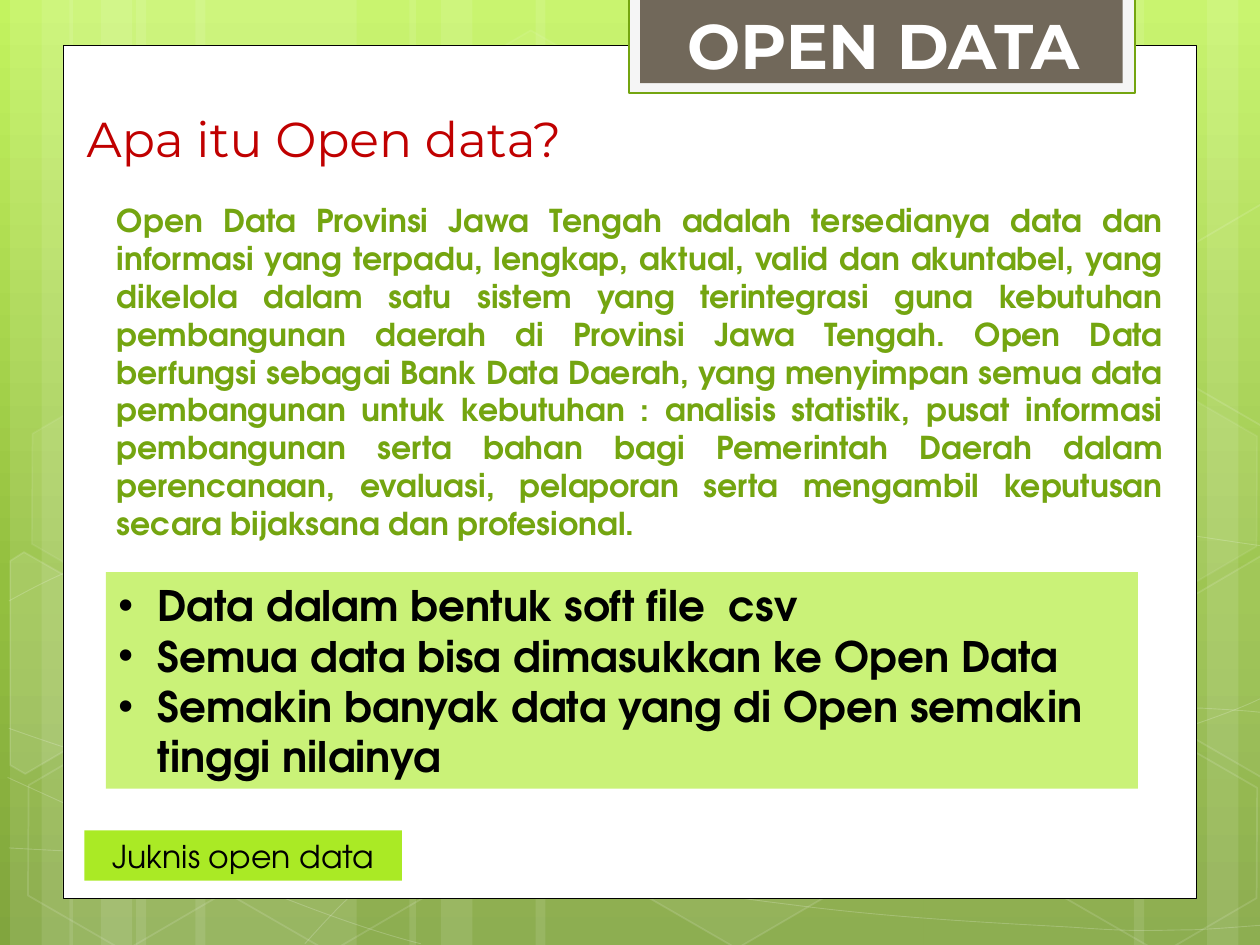
from copy import deepcopy
from math import cos, radians, sin
from lxml import etree
from pptx import Presentation
from pptx.dml.color import RGBColor
from pptx.enum.shapes import MSO_SHAPE
from pptx.enum.text import MSO_ANCHOR, MSO_AUTO_SIZE, PP_ALIGN
from pptx.oxml.ns import qn
from pptx.util import Inches, Pt

RECT, HEX = MSO_SHAPE.RECTANGLE, MSO_SHAPE.HEXAGON
LEFT, CENTER, JUSTIFY = PP_ALIGN.LEFT, PP_ALIGN.CENTER, PP_ALIGN.JUSTIFY
TOP, MIDDLE, FIXED = MSO_ANCHOR.TOP, MSO_ANCHOR.MIDDLE, MSO_AUTO_SIZE.NONE
HEAD, BODY = "Montserrat", "TeX Gyre Adventor"
COLORS = {
    "white": "FFFFFF", "black": "000000", "red": "C00000", "green": "74A510",
    "pale": "F5F5F5", "taupe": "71685A", "lime": "CAF278", "bright": "AAEA25",
    "sky": "C3F35F", "mid": "93BF3F", "deep": "81A53E",
}


def paint(shape, fill=None, line=None, width=1, see=100, edge=100):
    """Set fill and line; see and edge are their opacities in percent."""
    shape.shadow.inherit = False
    props = shape._element.spPr
    for ink, name, part in ((shape.fill, fill, see), (shape.line.fill, line, edge)):
        if not name or not part:
            ink.background()
            continue
        ink.solid()
        ink.fore_color.rgb = RGBColor.from_string(COLORS[name])
        if part < 100:
            home = props if ink is shape.fill else props.find(qn("a:ln"))
            color = home.find(qn("a:solidFill")).find(qn("a:srgbClr"))
            etree.SubElement(color, qn("a:alpha")).set("val", str(part * 1000))
    if line:
        shape.line.width = Pt(width)


def write(shape, lines, size, font, color, bold=False, align=LEFT, anchor=TOP):
    frame = shape.text_frame
    frame.word_wrap, frame.auto_size = True, FIXED
    frame.vertical_anchor = anchor
    frame.text = "\n".join(lines)
    for para in frame.paragraphs:
        para.alignment = align
        para.space_before = Pt(0)
        for run in para.runs:
            run.font.size, run.font.name, run.font.bold = Pt(size), font, bold
            run.font.color.rgb = RGBColor.from_string(COLORS[color])


deck = Presentation()
deck.slide_width, deck.slide_height = Inches(10), Inches(7.5)
slide = deck.slides.add_slide(deck.slide_layouts[1])
shapes = slide.shapes
title, points = slide.placeholders

# Background gradient
back = slide.background.fill
back.gradient()
back.gradient_angle = 270
stops = slide._element.find(".//" + qn("a:gsLst"))
stops.append(deepcopy(stops[-1]))
for stop, (at, name) in zip(back.gradient_stops, ((0, "sky"), (0.62, "mid"), (1, "deep"))):
    stop.position = at
    stop.color.rgb = RGBColor.from_string(COLORS[name])

# Vertical bands: left, width
for x, w in ((1.08, 1.75), (0.08, 0.5), (0.33, 0.83), (1.55, 1.75), (0.55, 0.5),
             (0.8, 0.83), (7.33, 1.75), (9.58, 0.5), (9, 0.83), (4.25, 3.08),
             (3.25, 0.5), (3.5, 0.83)):
    band = shapes.add_shape(RECT, Inches(x), 0, Inches(w), Inches(7.5))
    paint(band, "white", see=10)

# Waves: a start point, then three points for each Bezier segment
waves = (
    ((0.07, 6.73), (0.61, 6.76), (1.15, 6.79), (1.9, 6.78), (2.65, 6.77), (3.58, 6.75),
     (4.58, 6.65), (5.58, 6.55), (7, 6.36), (7.92, 6.17), (8.83, 5.98), (9.77, 5.68),
     (10.07, 5.51)),
    ((0.07, 4.77), (0.36, 4.61), (0.65, 4.46), (1.21, 4.31), (1.78, 4.16), (2.59, 3.94),
     (3.47, 3.87), (4.36, 3.8), (5.44, 3.79), (6.54, 3.87), (7.64, 3.95), (9.47, 4.26),
     (10.07, 4.34)),
    ((0.06, 6.17), (1.27, 6.72), (2.47, 7.27), (3.34, 7.49)),
    ((0.07, 5.78), (0.38, 5.89), (0.7, 6), (1.28, 6.16), (1.86, 6.31), (2.73, 6.56),
     (3.57, 6.73), (4.4, 6.9), (5.45, 7.08), (6.28, 7.18), (7.11, 7.29), (8, 7.33),
     (8.53, 7.36), (9.05, 7.4), (9.19, 7.38), (9.45, 7.38), (9.71, 7.37), (9.89, 7.35),
     (10.07, 7.34)),
    ((2.42, 7.49), (2.6, 7.29), (2.78, 7.09), (3.02, 6.91), (3.26, 6.73), (3.6, 6.53),
     (3.88, 6.39), (4.16, 6.25), (4.33, 6.19), (4.7, 6.09), (5.06, 5.99), (5.73, 5.85),
     (6.08, 5.78), (6.44, 5.71), (6.49, 5.71), (6.8, 5.69), (7.11, 5.66), (7.6, 5.63),
     (7.94, 5.62), (8.29, 5.61), (8.86, 5.62), (8.86, 5.62), (9.08, 5.62), (9.31, 5.62),
     (9.53, 5.62), (9.71, 5.63), (9.88, 5.64), (9.97, 5.65), (10.06, 5.66), (10.03, 5.65),
     (10.06, 5.66)),
)
for dots in waves:
    trail = [(Inches(x), Inches(y)) for x, y in dots]
    pen = shapes.build_freeform(*trail[0], scale=1.0)
    pen.add_line_segments(trail[1:], close=False)
    wave = pen.convert_to_shape()
    paint(wave, line="white", width=0.5, edge=20)
    steps = list(wave._element.iter(qn("a:lnTo")))
    for i in range(0, len(steps), 3):
        curve = etree.Element(qn("a:cubicBezTo"))
        steps[i].addprevious(curve)
        for step in steps[i:i + 3]:
            curve.append(step[0])
            step.getparent().remove(step)

# Hexagons: left, top, fill opacity, line opacity
for x, y, see, edge in ((3.34, 0.36, 4, 8), (4.97, 5.89, 6, 12), (0.11, 5.91, 0, 12),
                        (0.14, 3.12, 7, 8), (1.74, 5.92, 0, 12), (7.53, 4.53, 10, 12),
                        (8.34, 5.93, 0, 12), (8.34, 3.14, 7, 8)):
    cell = shapes.add_shape(HEX, Inches(x), Inches(y), Inches(1.75), Inches(1.52))
    cell.adjustments[0] = 0.285
    cell.rotation = 30
    paint(cell, "white", "white", see=see, edge=edge)

# Hexagons cut off by the slide edges, outlined upright and then turned about their centre
right = ((9.26, 4.85), (10.01, 4.41), (10.09, 4.46), (10.09, 6.13), (10.02, 6.17), (9.26, 5.73))
left = ((0.08, 4.45), (0.19, 4.38), (0.96, 4.82), (0.95, 5.7), (0.2, 6.14), (0.08, 6.07))
c, s = cos(radians(30)), sin(radians(30))
for dots, mx, my, lift, see in ((left, 0.36, 5.35, 0, 10), (right, 9.85, 5.2, 0, 4),
                                (right, 9.85, 5.2, 2.79, 0)):
    trail = [(Inches(mx + (x - mx) * c + (y - my) * s),
              Inches(my - lift - (x - mx) * s + (y - my) * c)) for x, y in dots]
    pen = shapes.build_freeform(*trail[0], scale=1.0)
    pen.add_line_segments(trail[1:])
    part = pen.convert_to_shape()
    part.rotation = 30
    paint(part, "white", "white", see=see, edge=12)

# White page and the title plate
for x, y, w, h, fill, line, width in (
        (0.5, 0.36, 9, 6.77, "white", "black", 0.5),
        (4.99, -0.02, 4.02, 0.76, "pale", "green", 1.25),
        (5.08, -0.02, 3.83, 0.68, "taupe", None, 0)):
    plate = shapes.add_shape(RECT, Inches(x), Inches(y), Inches(w), Inches(h))
    paint(plate, fill, line, width)

# Title, moved in front of the plate
title.left, title.top, title.width, title.height = Inches(5.16), 0, Inches(3.7), Inches(0.71)
write(title, ["OPEN DATA"], 36, HEAD, "white", True, CENTER)
shapes._spTree.append(title._element)

ask = shapes.add_textbox(Inches(0.59), Inches(0.81), Inches(5.43), Inches(0.57))
write(ask, ["Apa itu Open data?"], 28, HEAD, "red")

about = shapes.add_textbox(Inches(0.83), Inches(1.55), Inches(8.5), Inches(2.83))
write(about, [
    "Open Data Provinsi Jawa Tengah adalah tersedianya data dan informasi yang terpadu, "
    "lengkap, aktual, valid dan akuntabel, yang dikelola dalam satu sistem yang terintegrasi "
    "guna kebutuhan pembangunan daerah di Provinsi Jawa Tengah. Open Data berfungsi sebagai "
    "Bank Data Daerah, yang menyimpan semua data pembangunan untuk kebutuhan : analisis "
    "statistik, pusat informasi pembangunan serta bahan bagi Pemerintah Daerah dalam "
    "perencanaan, evaluasi, pelaporan serta mengambil keputusan secara bijaksana dan "
    "profesional."], 18, BODY, "green", True, JUSTIFY)

# Bulleted list
points.left, points.top = Inches(0.84), Inches(4.54)
points.width, points.height = Inches(8.19), Inches(1.72)
points.fill.solid()
points.fill.fore_color.rgb = RGBColor.from_string(COLORS["lime"])
write(points, ["Data dalam bentuk soft file  csv",
               "Semua data bisa dimasukkan ke Open Data",
               "Semakin banyak data yang di Open semakin tinggi nilainya"],
      24, BODY, "black", True, anchor=MIDDLE)
for para in points.text_frame.paragraphs:
    props = para._p.get_or_add_pPr()
    props.set("marL", str(Inches(0.31)))
    props.set("indent", str(-Inches(0.31)))
shapes._spTree.append(points._element)

guide = shapes.add_shape(RECT, Inches(0.67), Inches(6.59), Inches(2.52), Inches(0.4))
paint(guide, "bright")
write(guide, ["Juknis open data"], 18, BODY, "black", align=CENTER, anchor=MIDDLE)

deck.save("out.pptx")
